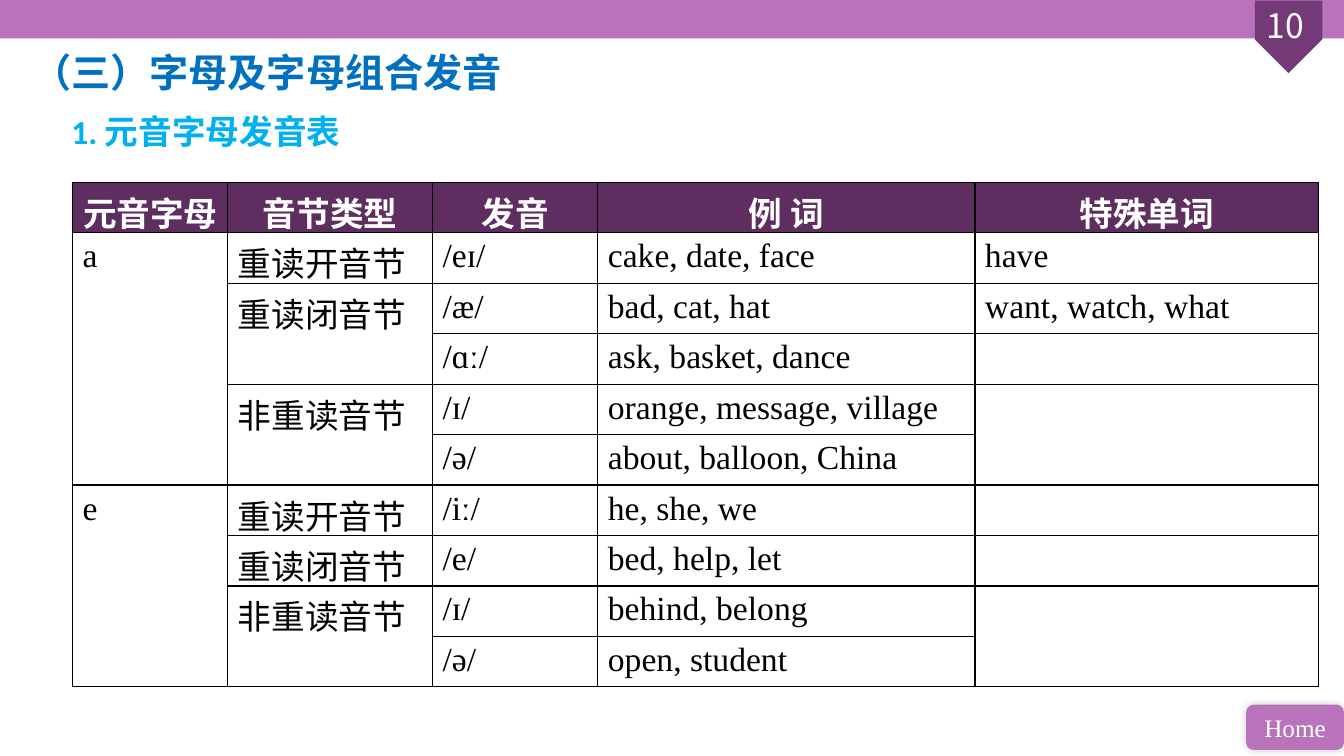
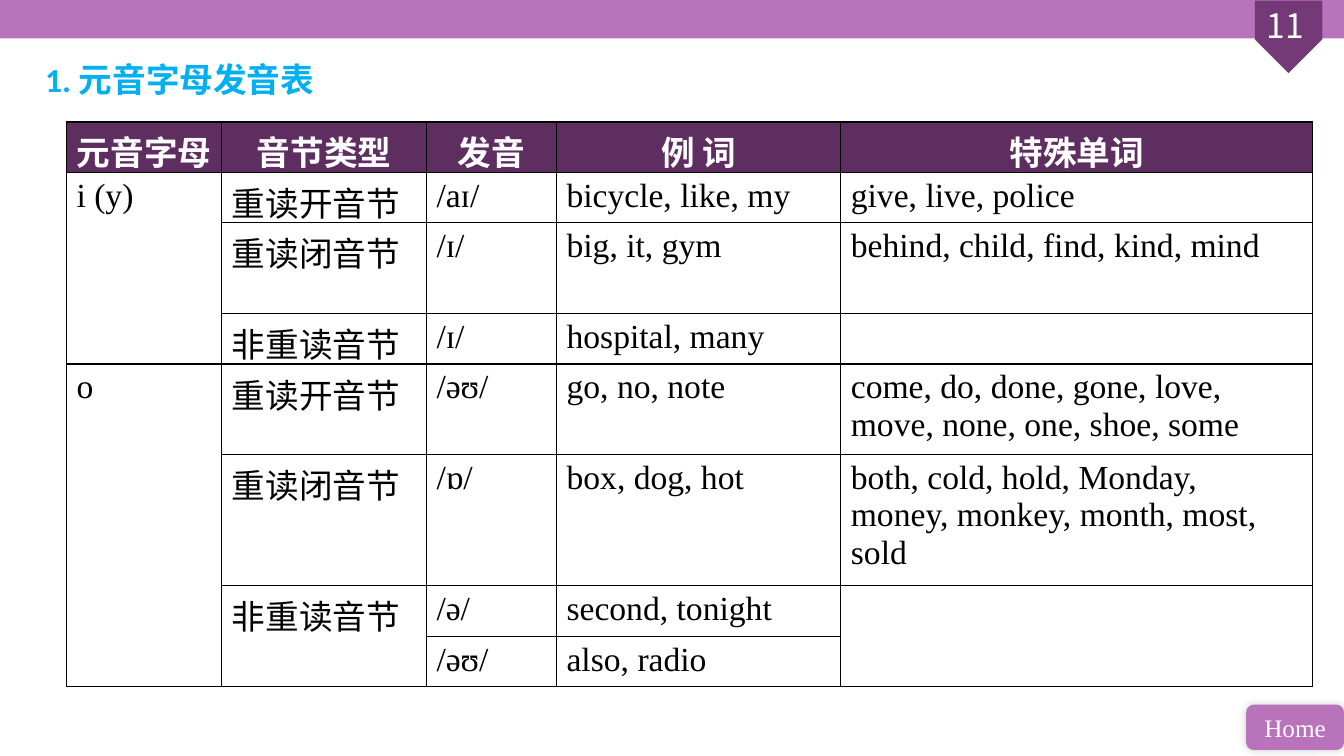
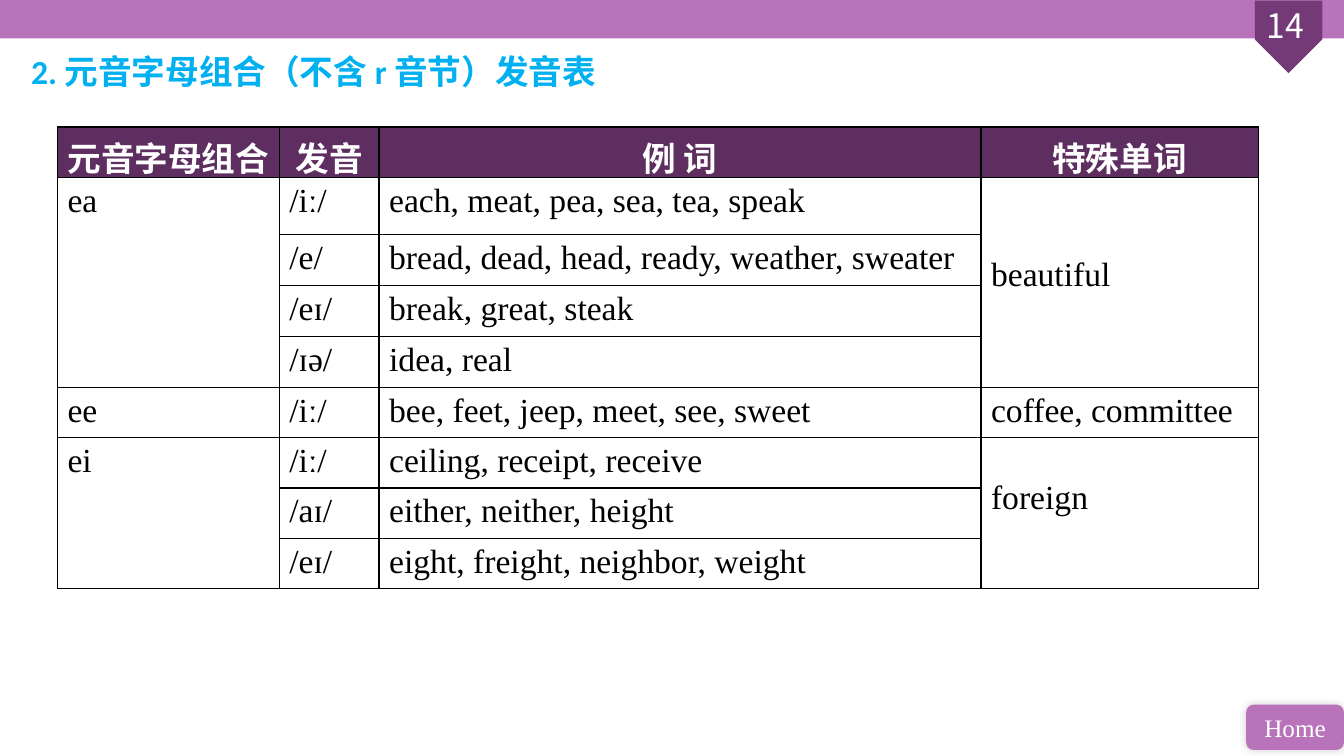
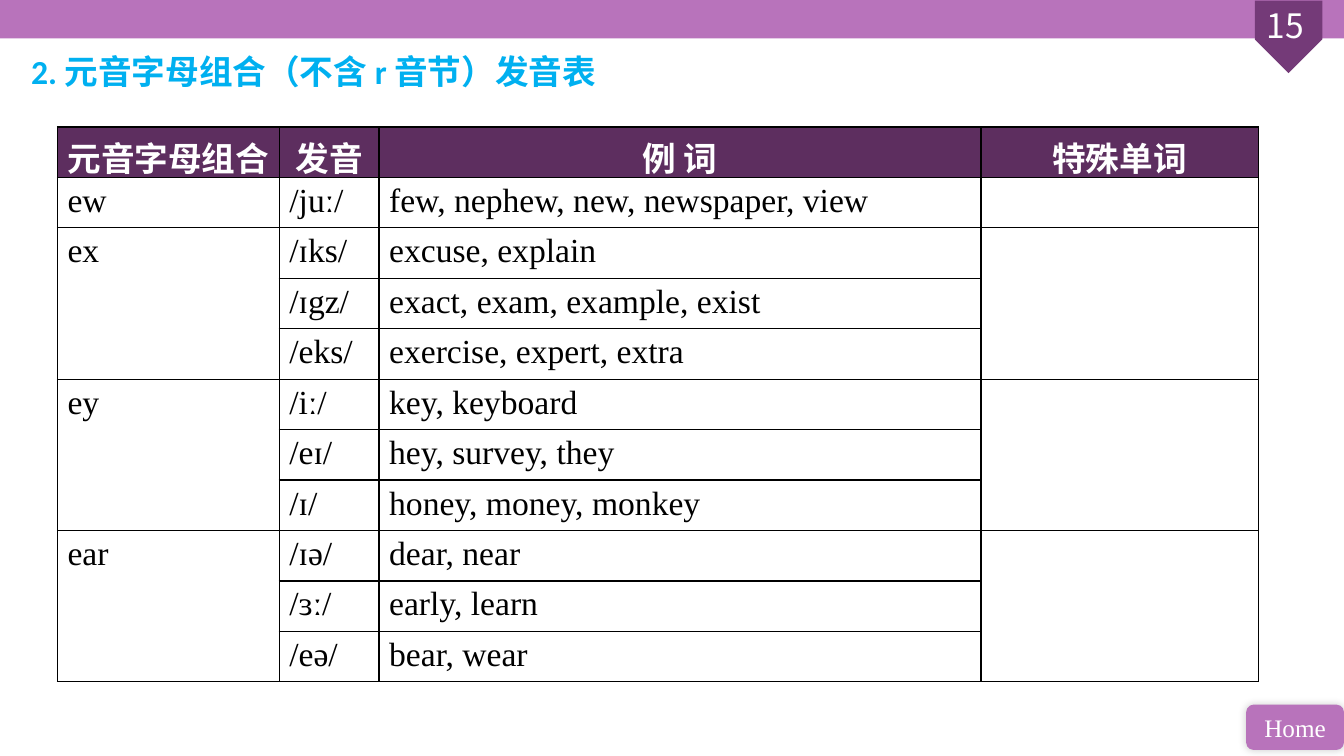
from lxml.etree import SubElement
from pptx import Presentation
from pptx.dml.color import RGBColor
from pptx.enum.shapes import MSO_SHAPE
from pptx.enum.text import MSO_ANCHOR, MSO_AUTO_SIZE, PP_ALIGN
from pptx.oxml import parse_xml
from pptx.oxml.ns import nsdecls, qn
from pptx.util import Inches, Pt

HUES = {
    "band": "B873BB",
    "flag": "743A78",
    "head": "5D2E5F",
    "title": "0070C0",
    "sub": "00B0F0",
    "white": "FFFFFF",
    "black": "000000",
}
SERIF = "Times New Roman"
OPEN, SHUT, WEAK = "重读开音节", "重读闭音节", "非重读音节"
LETTER = ["元音字母", "音节类型", "发音", "例 词", "特殊单词"]
COMBO = ["元音字母组合", "发音", "例 词", "特殊单词"]
WIDE = [2.2, 0.99, 5.97, 2.75]
VOWELS = "1. 元音字母发音表"
PAIRS = "2. 元音字母组合（不含 r 音节）发音表"

ROWS_A = [
    ["a", OPEN, "/eɪ/", "cake, date, face", "have"],
    [None, SHUT, "/æ/", "bad, cat, hat", "want, watch, what"],
    [None, None, "/ɑː/", "ask, basket, dance", ""],
    [None, WEAK, "/ɪ/", "orange, message, village", ""],
    [None, None, "/ə/", "about, balloon, China", None],
    ["e", OPEN, "/iː/", "he, she, we", ""],
    [None, SHUT, "/e/", "bed, help, let", ""],
    [None, WEAK, "/ɪ/", "behind, belong", ""],
    [None, None, "/ə/", "open, student", None],
]
ROWS_I = [
    ["i (y)", OPEN, "/aɪ/", "bicycle, like, my", "give, live, police"],
    [None, SHUT, "/ɪ/", "big, it, gym", "behind, child, find, kind, mind"],
    [None, WEAK, "/ɪ/", "hospital, many", ""],
    ["o", OPEN, "/əʊ/", "go, no, note",
     "come, do, done, gone, love, move, none, one, shoe, some"],
    [None, SHUT, "/ɒ/", "box, dog, hot",
     "both, cold, hold, Monday, money, monkey, month, most, sold"],
    [None, WEAK, "/ə/", "second, tonight", ""],
    [None, None, "/əʊ/", "also, radio", None],
]
ROWS_EA = [
    ["ea", "/iː/", "each, meat, pea, sea, tea, speak", "beautiful"],
    [None, "/e/", "bread, dead, head, ready, weather, sweater", None],
    [None, "/eɪ/", "break, great, steak", None],
    [None, "/ɪə/", "idea, real", None],
    ["ee", "/iː/", "bee, feet, jeep, meet, see, sweet", "coffee, committee"],
    ["ei", "/iː/", "ceiling, receipt, receive", "foreign"],
    [None, "/aɪ/", "either, neither, height", None],
    [None, "/eɪ/", "eight, freight, neighbor, weight", None],
]
ROWS_EW = [
    ["ew", "/juː/", "few, nephew, new, newspaper, view", ""],
    ["ex", "/ɪks/", "excuse, explain", ""],
    [None, "/ɪgz/", "exact, exam, example, exist", None],
    [None, "/eks/", "exercise, expert, extra", None],
    ["ey", "/iː/", "key, keyboard", ""],
    [None, "/eɪ/", "hey, survey, they", None],
    [None, "/ɪ/", "honey, money, monkey", None],
    ["ear", "/ɪə/", "dear, near", ""],
    [None, "/ɜː/", "early, learn", None],
    [None, "/eə/", "bear, wear", None],
]


def write(frame, text, size=24, font=SERIF, hue="black", bold=False,
          align=PP_ALIGN.LEFT, anchor=MSO_ANCHOR.TOP):
    frame.word_wrap = True
    frame.vertical_anchor = anchor
    para = frame.paragraphs[0]
    para.alignment = align
    run = para.add_run()
    run.text = text
    run.font.size = Pt(size)
    run.font.name = font
    run.font.bold = bold
    run.font.color.rgb = RGBColor.from_string(HUES[hue])


def border(cell):
    props = cell._tc.get_or_add_tcPr()
    for spot, side in enumerate(("a:lnL", "a:lnR", "a:lnT", "a:lnB")):
        line = parse_xml(f'<{side} {nsdecls("a")} w="12700"/>')
        fill = SubElement(line, qn("a:solidFill"))
        SubElement(fill, qn("a:srgbClr"), val=HUES["black"])
        props.insert(spot, line)


class Deck:
    """Holds the deck style and the slide being built."""

    def __init__(self):
        self.show = Presentation()
        self.show.slide_width = Inches(13.33)
        self.show.slide_height = Inches(7.5)

    def page(self, number):
        self.slide = self.show.slides.add_slide(self.show.slide_layouts[6])
        self.shape(MSO_SHAPE.RECTANGLE, 0, 0, 13.33, 0.38, "band")
        flag = self.shape(MSO_SHAPE.PENTAGON, 12.42, 0.03, 0.72, 0.67, "flag")
        flag.rotation = 90
        self.label(number, 12.26, 0, 0.98, 0.5, font="Noto Sans CJK SC",
                   hue="white", align=PP_ALIGN.CENTER)
        home = self.shape(MSO_SHAPE.ROUNDED_RECTANGLE,
                          12.36, 6.99, 0.97, 0.45, "band")
        write(home.text_frame, "Home", size=18, hue="white",
              align=PP_ALIGN.CENTER, anchor=MSO_ANCHOR.MIDDLE)
        self.glow(home)

    def shape(self, kind, left, top, width, height, hue):
        item = self.slide.shapes.add_shape(
            kind, Inches(left), Inches(top), Inches(width), Inches(height))
        item.shadow.inherit = False
        item.fill.solid()
        item.fill.fore_color.rgb = RGBColor.from_string(HUES[hue])
        item.line.fill.background()
        return item

    def glow(self, item):
        effect = item._element.spPr.find(qn("a:effectLst"))
        shade = SubElement(effect, qn("a:outerShdw"), blurRad="76200",
                           dist="0", dir="18900000", rotWithShape="0")
        tone = SubElement(shade, qn("a:srgbClr"), val=HUES["black"])
        SubElement(tone, qn("a:alpha"), val="20000")

    def label(self, text, left, top, width, height, **style):
        box = self.slide.shapes.add_textbox(
            Inches(left), Inches(top), Inches(width), Inches(height))
        write(box.text_frame, text, **style)
        box.text_frame.auto_size = MSO_AUTO_SIZE.SHAPE_TO_FIT_TEXT

    def title(self, text, left, top, width=12.27, size=24, hue="sub"):
        self.label(text, left, top, width, 0.5, size=size, font="Calibri",
                   hue=hue, bold=True)

    def table(self, left, top, widths, heights, head, rows, drops=None):
        data = [head] + rows
        grid = self.slide.shapes.add_table(
            len(data), len(head), Inches(left), Inches(top),
            Inches(sum(widths)), Inches(sum(heights))).table
        for col, width in zip(grid.columns, widths):
            col.width = Inches(width)
        for row, height in zip(grid.rows, heights):
            row.height = Inches(height)
        for r, row in enumerate(data):
            for c, text in enumerate(row):
                self.cell(grid.cell(r, c), text, r == 0, drops or {})
        for c in range(len(head)):
            self.merge(grid, c, [row[c] for row in data])

    def cell(self, cell, text, top, drops):
        border(cell)
        cell.fill.solid()
        cell.fill.fore_color.rgb = RGBColor.from_string(
            HUES["head" if top else "white"])
        if not text:
            cell.text_frame.paragraphs[0].font.size = Pt(24)
        elif top:
            write(cell.text_frame, text, hue="white", bold=True,
                  align=PP_ALIGN.CENTER)
            cell.vertical_anchor = MSO_ANCHOR.MIDDLE
        else:
            write(cell.text_frame, text)
            cell.margin_top = Inches(0.05 + drops.get(text, 0))

    def merge(self, grid, col, texts):
        starts = [r for r, text in enumerate(texts) if text is not None]
        for first, after in zip(starts, starts[1:] + [len(texts)]):
            if after - first > 1:
                grid.cell(first, col).merge(grid.cell(after - 1, col))


def main():
    deck = Deck()
    deck.page("10")
    deck.title("（三）字母及字母组合发音", 0.22, 0.43, 4.9, 28, "title")
    deck.title(VOWELS, 0.61, 1.05)
    deck.table(0.72, 1.81, [1.54, 2.03, 1.64, 3.74, 3.41], [0.5] * 10,
               LETTER, ROWS_A)

    deck.page("11")
    deck.title(VOWELS, 0.35, 0.54)
    deck.table(0.66, 1.21, [1.54, 2.03, 1.29, 2.82, 4.68],
               [0.5, 0.5, 0.9, 0.5, 0.9, 1.3, 0.5, 0.5], LETTER, ROWS_I)

    deck.page("14")
    deck.title(PAIRS, 0.21, 0.46)
    deck.table(0.57, 1.26, WIDE, [0.5, 0.57, 0.5, 0.51] + [0.5] * 5,
               COMBO, ROWS_EA, {"beautiful": 0.74, "foreign": 0.37})

    deck.page("15")
    deck.title(PAIRS, 0.21, 0.46)
    deck.table(0.57, 1.26, WIDE, [0.5] * 11, COMBO, ROWS_EW)
    deck.show.save("out.pptx")


if __name__ == "__main__":
    main()
